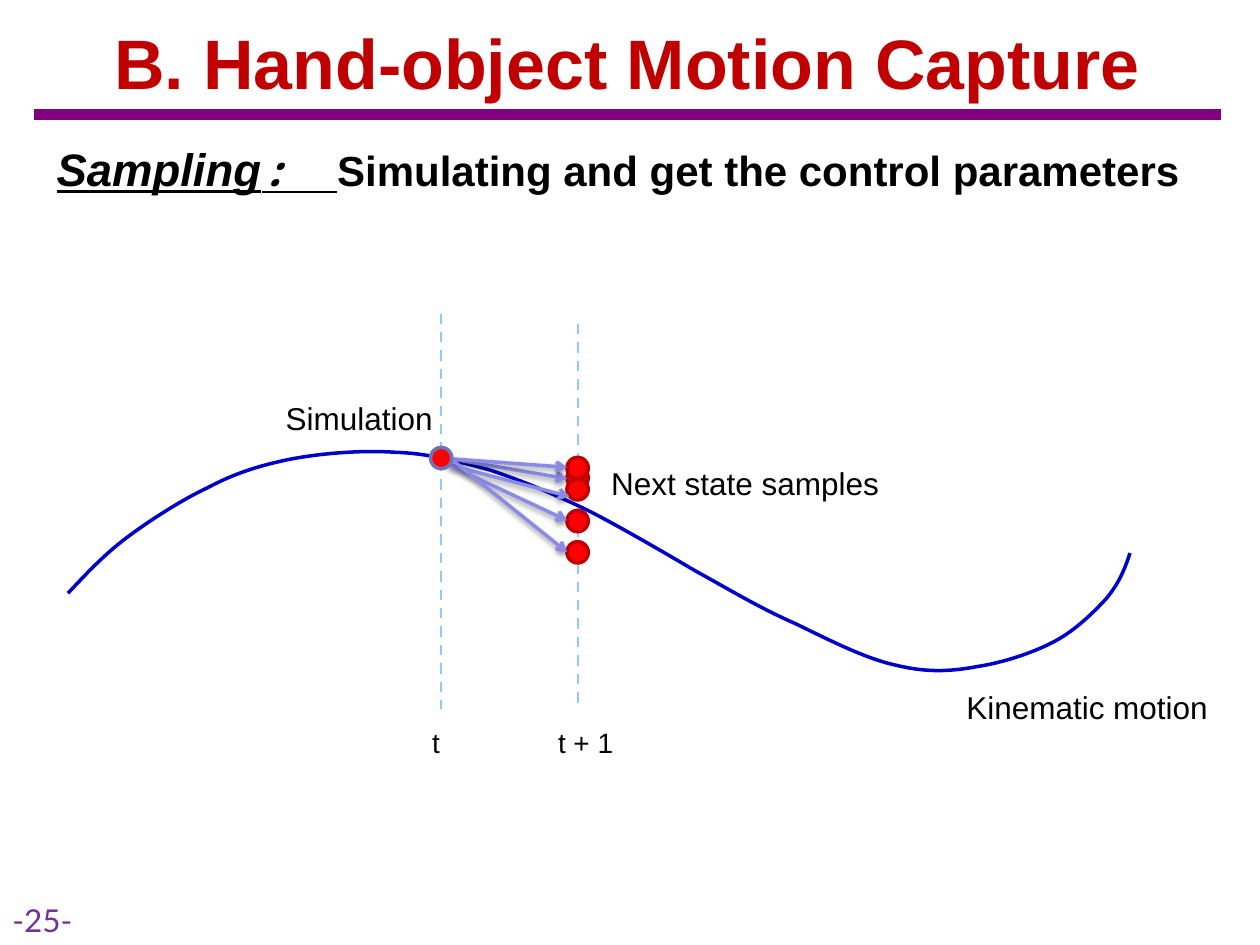
from lxml import etree
from pptx import Presentation, util as u
from pptx.dml.color import RGBColor
from pptx.enum import dml, shapes, text
from pptx.oxml.ns import qn

HUES = {
    "title": "C00000", "rule": "800080", "page": "7030A0", "ink": "000000",
    "curve": "0000CC", "guide": "93C8FC", "arrow": "8A8AE7",
    "dot": "FF0000", "now": "7171BD", "next": "C00000",
}
DOT = 0.43      # diameter of a state dot
COL = 11.43     # left edge of the dots at t + 1
# start point, then three points for each Bezier piece
CURVE = [
    (1.37, 11.96),
    (1.73, 11.58), (2.08, 11.2), (2.54, 10.85),
    (3.02, 10.49), (3.66, 10.08), (4.19, 9.83),
    (4.72, 9.55), (5.18, 9.4), (5.79, 9.27),
    (6.43, 9.14), (7.29, 9.07), (7.98, 9.12),
    (8.64, 9.14), (9.22, 9.3), (9.86, 9.47),
    (10.49, 9.68), (11.1, 9.93), (11.79, 10.26),
    (12.47, 10.59), (14.02, 11.51), (14.02, 11.51),
    (14.71, 11.89), (15.34, 12.27), (16.03, 12.57),
    (16.71, 12.9), (17.45, 13.28), (18.06, 13.41),
    (18.67, 13.56), (19.15, 13.54), (19.69, 13.44),
    (20.22, 13.36), (20.83, 13.16), (21.26, 12.93),
    (21.69, 12.7), (22.05, 12.34), (22.3, 12.07),
    (22.56, 11.76), (22.68, 11.46), (22.78, 11.15),
]


def cms(*vals):
    return [u.Cm(v) for v in vals]


def hue(name):
    return RGBColor.from_string(HUES[name])


def add(top, tag, **attrs):
    return etree.SubElement(top, qn(tag), {k: str(v) for k, v in attrs.items()})


class Board:
    def __init__(self, slide, font="Arial"):
        self.slide, self.font = slide, font

    def stroke(self, line, color, width):
        line.color.rgb = hue(color)
        line.width = u.Pt(width)

    def text(self, box, runs, align="LEFT", anchor="TOP", grow=True):
        """Add a text box; runs are pairs of a string and its font values."""
        frame = self.slide.shapes.add_textbox(*cms(*box)).text_frame
        frame.word_wrap = True
        frame.vertical_anchor = text.MSO_ANCHOR[anchor]
        if grow:
            frame.auto_size = text.MSO_AUTO_SIZE.SHAPE_TO_FIT_TEXT
        para = frame.paragraphs[0]
        para.alignment = text.PP_ALIGN[align]
        for words, form in runs:
            run = para.add_run()
            run.text = words
            look = {"name": self.font, "size": 18, "color": "ink", **form}
            run.font.color.rgb = hue(look.pop("color"))
            look["size"] = u.Pt(look["size"])
            for key, val in look.items():
                setattr(run.font, key, val)

    def line(self, start, end, color, width, dash=False):
        link = self.slide.shapes.add_connector(
            shapes.MSO_CONNECTOR.STRAIGHT, *cms(*start, *end))
        self.stroke(link.line, color, width)
        if dash:
            link.line.dash_style = dml.MSO_LINE.DASH
        add(link._element.spPr, "a:effectLst")
        return link

    def arrow(self, start, end):
        """Draw an open-headed arrow with a soft shadow below it."""
        props = self.line(start, end, "arrow", 2)._element.spPr
        add(props.find(qn("a:ln")), "a:tailEnd", type="arrow")
        shade = add(props.find(qn("a:effectLst")), "a:outerShdw", blurRad=40000,
                    dist=20000, dir=5400000, rotWithShape=0)
        add(add(shade, "a:srgbClr", val=HUES["ink"]), "a:alpha", val=38000)

    def dot(self, left, top, edge="next"):
        oval = self.slide.shapes.add_shape(
            shapes.MSO_SHAPE.OVAL, *cms(left, top, DOT, DOT))
        oval.shadow.inherit = False
        oval.fill.solid()
        oval.fill.fore_color.rgb = hue("dot")
        self.stroke(oval.line, edge, 2)

    def curve(self, points, color, width):
        """Draw an open outline whose points are cubic Bezier triples."""
        first, *rest = [cms(*p) for p in points]
        maker = self.slide.shapes.build_freeform(*first)
        maker.add_line_segments(rest, close=False)
        shape = maker.convert_to_shape()
        shape.shadow.inherit = False
        shape.fill.background()
        self.stroke(shape.line, color, width)
        route = next(shape._element.iter(qn("a:path")))
        steps = route.findall(qn("a:lnTo"))
        for i in range(0, len(steps), 3):
            bend = add(route, "a:cubicBezTo")
            for step in steps[i:i + 3]:
                bend.append(step[0])
                route.remove(step)


def main():
    deck = Presentation()
    deck.slide_width, deck.slide_height = cms(25.4, 19.05)
    board = Board(deck.slides.add_slide(deck.slide_layouts[6]))

    board.line((0.69, 2.31), (24.61, 2.31), "rule", 6)
    board.text((0, 18.03, 2.11, 1.02),
               [("-25-", {"name": "Lato", "color": "page"})])
    lead = {"bold": True, "italic": True, "underline": True}
    board.text((0.89, 2.72, 23.7, 14.17), [
        ("Sampling", {"size": 26, **lead}),
        (":  ", {"size": 24, "name": "Noto Sans Mono", **lead}),
        ("Simulating and get the control parameters", {"size": 24, "bold": True}),
    ], grow=False)

    board.curve(CURVE, "curve", 2)
    board.line((8.89, 6.32), (8.89, 14.3), "guide", 1.5, dash=True)
    board.line((11.65, 6.53), (11.65, 14.3), "guide", 1.5, dash=True)
    for left, words in ((8.46, "t"), (11, "t + 1")):
        board.text((left, 14.5, 8.05, 0.94), [(words, {"size": 16})])
    board.text((18.42, 13.74, 6.99, 1.02), [("Kinematic motion", {})], "CENTER")

    side, low = (9.09, 9.25), (9.04, 9.37)
    board.dot(COL, 9.42)
    board.arrow(side, (COL, 9.65))
    for top in (9.65, 9.22, 10.29, 10.92):
        board.dot(COL, top)
    for start, end in ((low, (11.48, 10.01)), (side, (COL, 9.42)),
                       (low, (COL, 10.49)), (side, (COL, 11.13))):
        board.arrow(start, end)
    board.dot(8.68, 9.02, "now")

    board.text((12.07, 9.22, 7.24, 1.02), [("Next state samples", {})])
    board.text((5.51, 7.92, 3.99, 1.02), [("Simulation", {})])
    board.text((0.89, 0.13, 23.5, 2.21), [
        ("B. Hand-object Motion Capture",
         {"size": 40, "bold": True, "color": "title"}),
    ], "CENTER", "MIDDLE", grow=False)
    deck.save("out.pptx")


if __name__ == "__main__":
    main()
